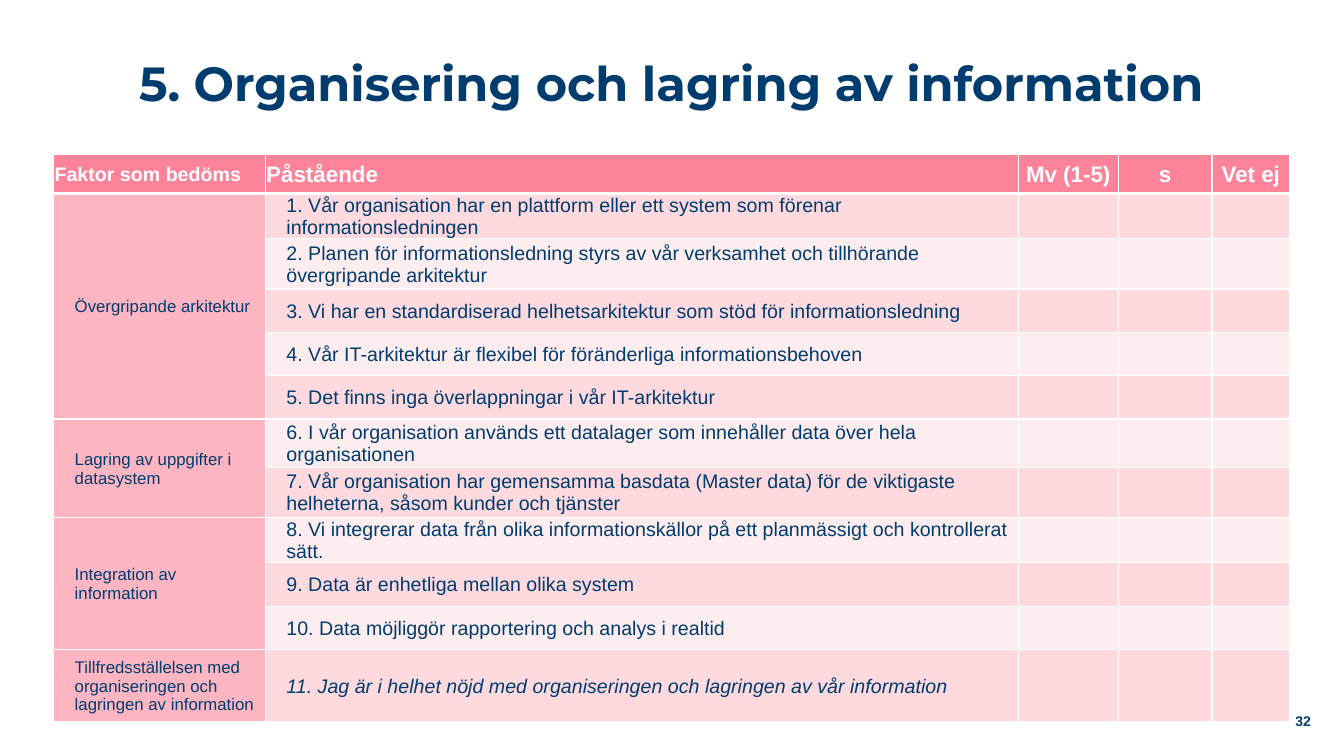
from dataclasses import dataclass

from lxml.etree import SubElement
from pptx import Presentation
from pptx.dml.color import RGBColor as Color
from pptx.enum.text import MSO_ANCHOR as Anchor, PP_ALIGN as Align
from pptx.oxml import parse_xml
from pptx.oxml.ns import nsdecls, qn
from pptx.util import Inches, Pt


@dataclass(frozen=True)
class Theme:
    navy: str = "003C6D"
    white: str = "FFFFFF"
    header: str = "FC8399"
    factor: str = "FDB5C2"
    bands: tuple = ("FED9DE", "FEEDEF")
    title_font: str = "Montserrat"
    body_font: str = "Arial"
    title_size: float = 34.2
    heading_size: int = 16
    text_size: int = 14
    factor_size: int = 12
    number_size: int = 10


HEADINGS = ["Faktor som bedöms", "Påstående", "Mv (1-5)", "s", "Vet ej"]
COLUMN_SHARES = [15.75, 56.04, 7.43, 6.98, 5.78]
HEADER_SHARE = 5.2
FACTORS = [
    ("Övergripande arkitektur", [
        ("1. Vår organisation har en plattform eller ett system som förenar informationsledningen", 5.73),
        ("2. Planen för informationsledning styrs av vår verksamhet och tillhörande övergripande arkitektur", 6.67),
        ("3. Vi har en standardiserad helhetsarkitektur som stöd för informationsledning", 5.73),
        ("4. Vår IT-arkitektur är flexibel för föränderliga informationsbehoven", 5.73),
        ("5. Det finns inga överlappningar i vår IT-arkitektur", 5.73),
    ]),
    ("Lagring av uppgifter i datasystem", [
        ("6. I vår organisation används ett datalager som innehåller data över hela organisationen", 6.4),
        ("7. Vår organisation har gemensamma basdata (Master data) för de viktigaste helheterna, "
         "såsom kunder och tjänster", 6.67),
    ]),
    ("Integration av information", [
        ("8. Vi integrerar data från olika informationskällor på ett planmässigt och kontrollerat sätt.", 5.73),
        ("9. Data är enhetliga mellan olika system", 5.73),
        ("10. Data möjliggör rapportering och analys i realtid", 5.73),
    ]),
    ("Tillfredsställelsen med organiseringen och lagringen av information", [
        ("11. Jag är i helhet nöjd med organiseringen och lagringen av vår information", 9.6),
    ]),
]


class SlideBuilder:
    def __init__(self, presentation, theme):
        self.presentation = presentation
        self.theme = theme
        self.slide = presentation.slides.add_slide(presentation.slide_layouts[5])

    def across(self, percent):
        return round(self.presentation.slide_width * percent / 100)

    def down(self, percent):
        return round(self.presentation.slide_height * percent / 100)

    def area(self, left, top, width, height):
        return self.across(left), self.down(top), self.across(width), self.down(height)

    def add_text(self, frame, text, size, color, font=None, bold=False, italic=False,
                 align=Align.LEFT, indent=0):
        paragraph = frame.paragraphs[0]
        paragraph.alignment = align
        if indent:
            properties = paragraph._p.get_or_add_pPr()
            properties.set("marL", str(self.across(indent)))
            properties.set("indent", "0")
        run = paragraph.add_run()
        run.text = text
        run.font.name = font or self.theme.body_font
        run.font.size = Pt(size)
        run.font.bold = bold
        run.font.italic = italic
        run.font.color.rgb = Color.from_string(color)
        return paragraph

    def title(self, text, *area):
        shape = self.slide.shapes.title
        shape.left, shape.top, shape.width, shape.height = self.area(*area)
        frame = shape.text_frame
        frame.word_wrap = True
        frame.vertical_anchor = Anchor.MIDDLE
        frame.margin_bottom = self.down(8)
        paragraph = self.add_text(frame, text, self.theme.title_size, self.theme.navy,
                                  self.theme.title_font, bold=True, align=Align.CENTER)
        paragraph.line_spacing = 0.9

    def page_number(self, text, *area):
        frame = self.slide.shapes.add_textbox(*self.area(*area)).text_frame
        frame.word_wrap = True
        frame.vertical_anchor = Anchor.MIDDLE
        frame.margin_right = 0
        self.add_text(frame, text, self.theme.number_size, self.theme.navy,
                      bold=True, align=Align.RIGHT)

    def table(self, left, top, columns, rows):
        shape = self.slide.shapes.add_table(
            len(rows), len(columns), *self.area(left, top, sum(columns), sum(rows)))
        table = shape.table
        for column, share in zip(table.columns, columns):
            column.width = self.across(share)
        for row, share in zip(table.rows, rows):
            row.height = self.down(share)
        return table

    def cell(self, cell, fill, bottom=1):
        cell.fill.solid()
        cell.fill.fore_color.rgb = Color.from_string(fill)
        cell.vertical_anchor = Anchor.MIDDLE
        cell.margin_left = cell.margin_right = cell.margin_top = self.across(0.08)
        cell.margin_bottom = 0
        properties = cell._tc.get_or_add_tcPr()
        for position, (side, width) in enumerate(zip("LRTB", (1, 1, 1, bottom))):
            line = parse_xml(f'<a:ln{side} {nsdecls("a")} w="{Pt(width)}"/>')
            paint = SubElement(line, qn("a:solidFill"))
            SubElement(paint, qn("a:srgbClr"), val=self.theme.white)
            properties.insert(position, line)
        return cell.text_frame

    def survey(self, left, top):
        theme = self.theme
        statements = [item for _, items in FACTORS for item in items]
        heights = [HEADER_SHARE] + [share for _, share in statements]
        table = self.table(left, top, COLUMN_SHARES, heights)
        for column, heading in enumerate(HEADINGS):
            self.add_text(self.cell(table.cell(0, column), theme.header, bottom=3), heading,
                          theme.heading_size if column else theme.text_size, theme.white,
                          bold=True, align=Align.CENTER if column > 1 else Align.LEFT)
        for row, (statement, _) in enumerate(statements, 1):
            self.cell(table.cell(row, 0), theme.factor)
            frames = [self.cell(table.cell(row, column), theme.bands[(row - 1) % 2])
                      for column in range(1, len(HEADINGS))]
            self.add_text(frames[0], statement, theme.text_size, theme.navy,
                          italic=row == len(statements), indent=1.5)
        first = 1
        for factor, items in FACTORS:
            origin = table.cell(first, 0)
            if len(items) > 1:
                origin.merge(table.cell(first + len(items) - 1, 0))
            self.add_text(origin.text_frame, factor, theme.factor_size, theme.navy, indent=1.5)
            first += len(items)


def main():
    presentation = Presentation()
    presentation.slide_width = Inches(13.33)
    presentation.slide_height = Inches(7.5)
    builder = SlideBuilder(presentation, Theme())
    builder.title("5. Organisering och lagring av information", 7.28, 5.33, 85.3, 19.33)
    builder.survey(3.98, 20.4)
    builder.page_number("32", 92.8, 92.67, 4.73, 5.33)
    presentation.save("out.pptx")


if __name__ == "__main__":
    main()
